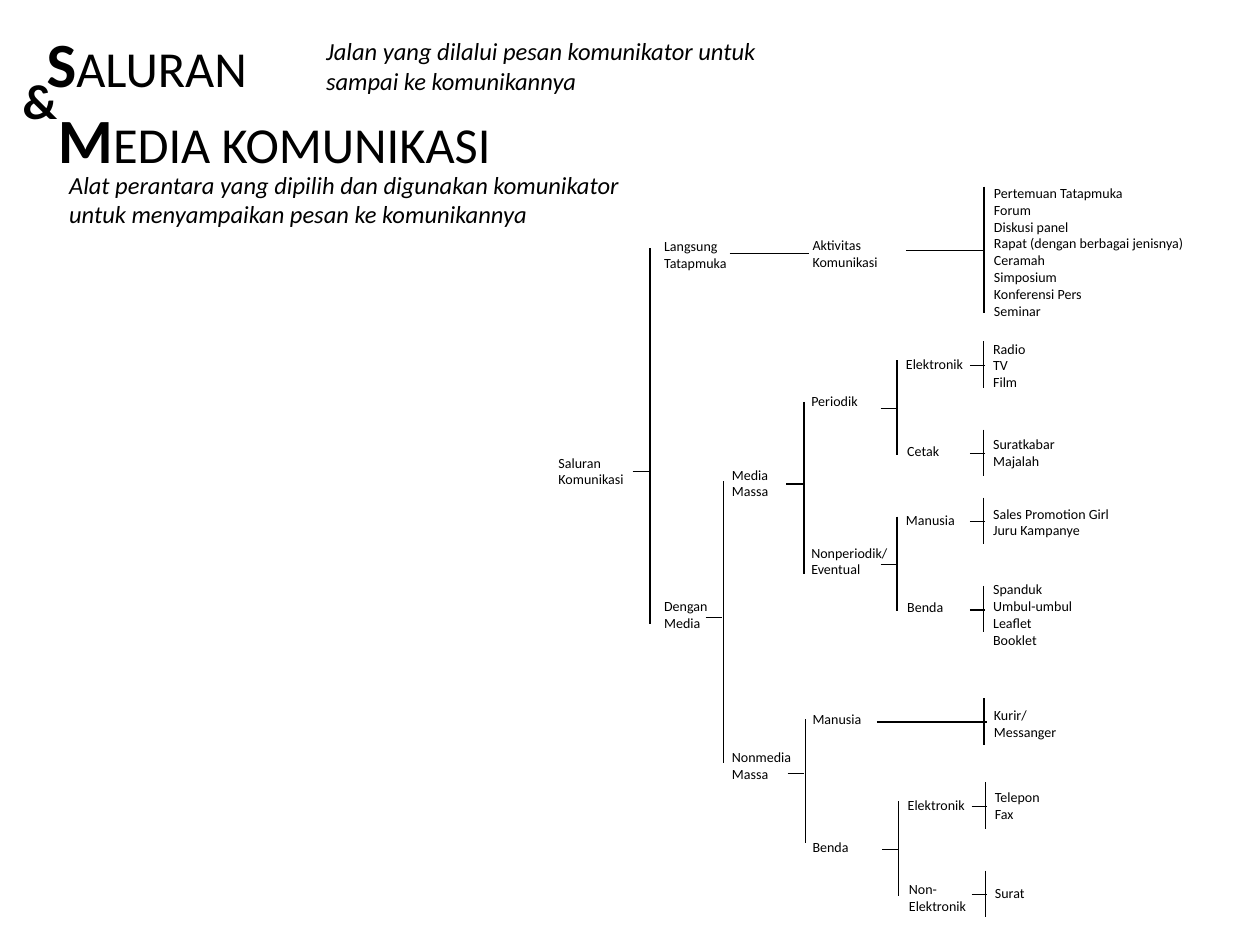
import pptx
import pptx.dml.color
import pptx.enum.shapes
import pptx.enum.text
import pptx.oxml.ns
import pptx.util
from lxml import etree

Pt = pptx.util.Pt
FONT = "Calibri"
INK = "000000"


def rgb(value):
    return pptx.dml.color.RGBColor.from_string(value)


def add_span(para, text, size, bold=False, italic=False):
    span = para.add_run()
    span.text = text
    span.font.name = FONT
    span.font.size = Pt(size)
    span.font.bold = bold
    span.font.italic = italic
    span.font.color.rgb = rgb(INK)


def add_text(page, left, top, width, height, lines, size=8, wrap=True, **style):
    box = page.shapes.add_textbox(Pt(left), Pt(top), Pt(width), Pt(height))
    frame = box.text_frame
    frame.word_wrap = wrap
    for index, line in enumerate(lines):
        para = frame.add_paragraph() if index else frame.paragraphs[0]
        add_span(para, line, size, **style)
    return box


def add_line(page, x1, y1, x2, y2):
    line = page.shapes.add_connector(
        pptx.enum.shapes.MSO_CONNECTOR.STRAIGHT, Pt(x1), Pt(y1), Pt(x2), Pt(y2))
    line.line.color.rgb = rgb(INK)
    line.line.width = Pt(0.75)
    etree.SubElement(line._element.spPr, pptx.oxml.ns.qn("a:effectLst"))


def add_label(page, left, top, *lines, width=90, height=36):
    add_text(page, left, top, width, height, lines)


def add_bracket(page, x, top, height, stem_y, stem_start=-9.4, stem_end=0):
    """Vertical bar with a short stem; stem values are measured from the bar's top."""
    add_line(page, x, top, x, top + height)
    add_line(page, x + stem_start, top + stem_y, x + stem_end, top + stem_y)


def add_leaf_bracket(page, x, top):
    add_bracket(page, x, top, 26.6, 13.7, -7.9, 0.7)


def add_pair(page, left, top, branches):
    """Fork into two categories, each followed by its list of examples."""
    add_bracket(page, left, top, 54, 27.4, -9.4, -0.7)
    for index, (category, label_y, examples, examples_y) in enumerate(branches):
        add_label(page, left - 2 + 0.7 * index, top + label_y, *category)
        add_leaf_bracket(page, left + 49.5, top - 10.8 + 50.4 * index)
        height = 54 if len(examples) > 3 else 36
        add_label(page, left + 47.8, top + examples_y, *examples, height=height)


def add_tree(page, left, top):
    labels = [
        (0, 154, "Saluran", "Komunikasi"),
        (60.4, 30.4, "Langsung", "Tatapmuka"),
        (60.4, 236.2, "Dengan", "Media"),
        (145.2, 29.6, "Aktivitas", "Komunikasi"),
        (99.1, 160.8, "Media", "Massa"),
        (144.5, 119, "Periodik"),
        (144.5, 205.4, "Nonperiodik/", "Eventual"),
        (99.1, 322.1, "Nonmedia", "Massa"),
        (145.2, 300.5, "Manusia"),
        (145.2, 373.9, "Benda"),
        (248.9, 298.3, "Kurir/", "Messanger"),
    ]
    for x, y, *lines in labels:
        add_label(page, left + x, top + y, *lines)
    add_label(page, left + 248.9, top, "Pertemuan Tatapmuka", "Forum", "Diskusi panel",
              "Rapat (dengan berbagai jenisnya)", "Ceramah", "Simposium",
              "Konferensi Pers", "Seminar", width=162, height=104.4)

    brackets = [
        (59.5, 39.8, 214.6, 127.5),
        (101.3, 173, 161.3, 77.8),
        (147.4, 127.7, 98.6, 46.8),
        (148.1, 309.1, 70.6, 31),
    ]
    for x, y, height, stem_y in brackets:
        add_bracket(page, left + x, top + y, height, stem_y, -10, -0.7)
    add_bracket(page, left + 250.3, top + 4.6, 72, 36.7, -44.6)
    add_leaf_bracket(page, left + 250.3, top + 296.9)
    for start, end, y in [(104.9, 150.2, 42.7), (189.1, 251.8, 310.6)]:
        add_line(page, left + start, top + y, left + end, top + y)

    add_pair(page, left + 200.6, top + 103.9, [
        (["Elektronik"], -6.5, ["Radio", "TV", "Film"], -15.1),
        (["Cetak"], 43.2, ["Suratkabar", "Majalah"], 39.6)])
    add_pair(page, left + 200.6, top + 193.2, [
        (["Manusia"], -6.5, ["Sales Promotion Girl", "Juru Kampanye"], -10.1),
        (["Benda"], 43.2, ["Spanduk", "Umbul-umbul", "Leaflet", "Booklet"], 33.1)])
    add_pair(page, left + 201.6, top + 355.9, [
        (["Elektronik"], -6.5, ["Telepon", "Fax"], -10.8),
        (["Non-", "Elektronik"], 41.8, ["Surat"], 43.9)])


def add_heading(page, left, top, width, height):
    title = page.shapes.title
    title.left, title.top = Pt(left), Pt(top)
    title.width, title.height = Pt(width), Pt(height)
    frame = title.text_frame
    frame.auto_size = pptx.enum.text.MSO_AUTO_SIZE.NONE
    frame.vertical_anchor = pptx.enum.text.MSO_ANCHOR.MIDDLE
    para = frame.paragraphs[0]
    para.alignment = pptx.enum.text.PP_ALIGN.LEFT
    add_span(para, "S", 36, bold=True)
    add_span(para, "ALURAN", 28.8)
    para.add_line_break()
    add_span(para, " ", 28.8)
    add_span(para, "M", 36, bold=True)
    add_span(para, "EDIA KOMUNIKASI", 28.8)

    notes = [
        (-13.6, 24.5, 34.6, 41, "&", 28, False, {"bold": True}),
        (159.8, 5.1, 277.2, 41,
         "Jalan yang dilalui pesan komunikator untuk sampai ke komunikannya",
         14, True, {"italic": True}),
        (13, 81.4, 349.2, 41,
         "Alat perantara yang dipilih dan digunakan komunikator untuk "
         "menyampaikan pesan ke komunikannya", 14, True, {"italic": True}),
    ]
    for x, y, note_width, note_height, text, size, wrap, style in notes:
        box = add_text(page, left + x, top + y, note_width, note_height,
                       [text], size, wrap, **style)
        box.text_frame.auto_size = pptx.enum.text.MSO_AUTO_SIZE.SHAPE_TO_FIT_TEXT


def main():
    deck = pptx.Presentation()
    deck.slide_width, deck.slide_height = Pt(720), Pt(540)
    page = deck.slides.add_slide(deck.slide_layouts[5])
    add_tree(page, 312, 102)
    add_heading(page, 19.4, 12.2, 648, 90)
    deck.save("out.pptx")


if __name__ == "__main__":
    main()
